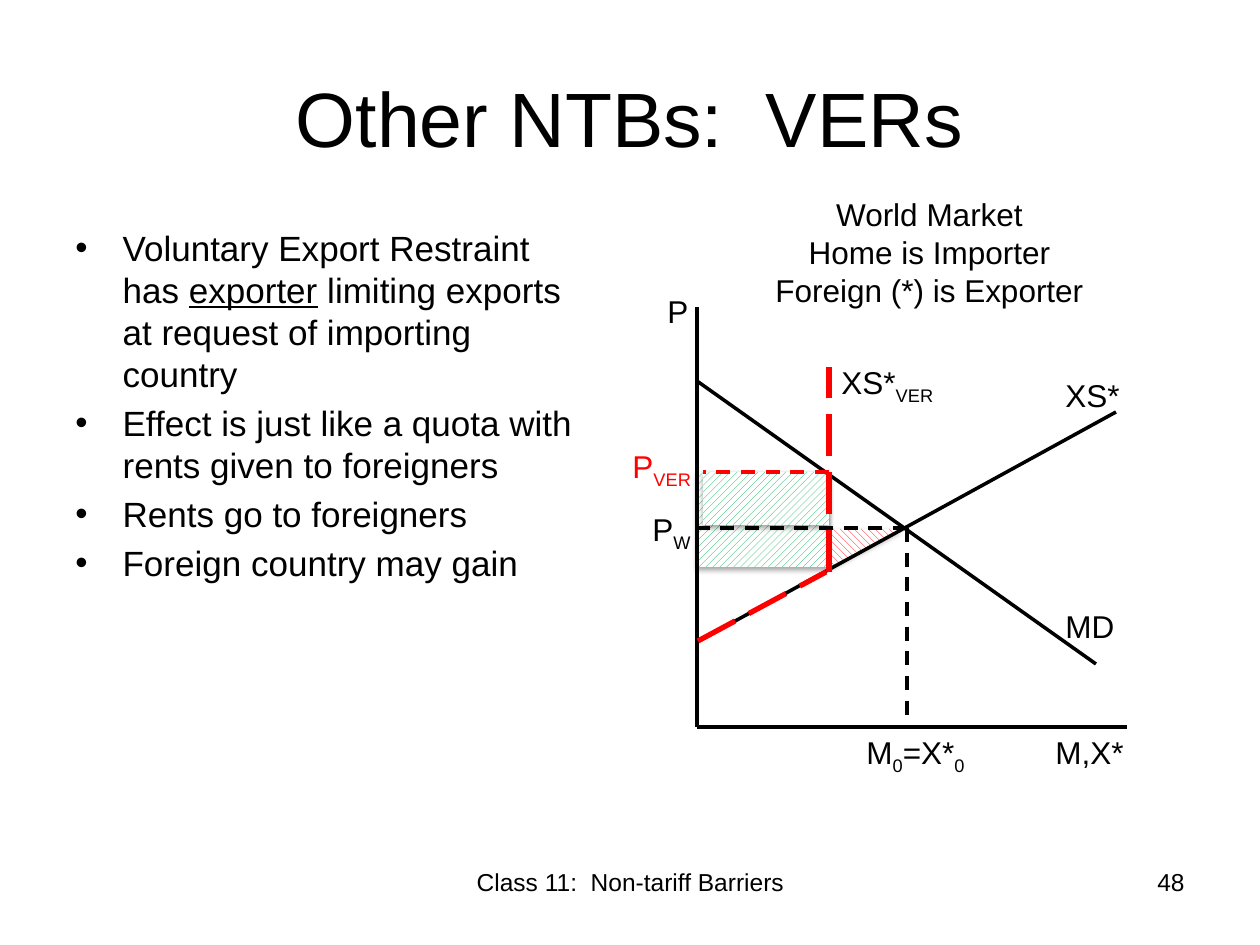
"""Build a slide on voluntary export restraints with a world market diagram."""
from lxml import etree
from pptx import Presentation
from pptx.dml.color import RGBColor
from pptx.enum.dml import MSO_LINE_DASH_STYLE as Dash, MSO_PATTERN_TYPE as Pattern
from pptx.enum.shapes import MSO_CONNECTOR as Conn, MSO_SHAPE as Shape
from pptx.enum.text import MSO_ANCHOR as Anchor, PP_ALIGN as Align
from pptx.oxml import parse_xml
from pptx.oxml.ns import nsdecls, qn
from pptx.util import Pt

SCALE = 914400 / 126
FONT = "Arial"
COLORS = {"black": "000000", "red": "FF0000", "green": "00B050", "white": "FFFFFF"}

TITLE = "Other NTBs:  VERs"
BULLETS = [
    "Voluntary Export Restraint has |exporter| limiting exports at request of importing country",
    "Effect is just like a quota with rents given to foreigners",
    "Rents go to foreigners",
    "Foreign country may gain",
]
HEADING = ["World Market", "Home is Importer", "Foreign (*) is Exporter"]
FOOTER = "Class 11:  Non-tariff Barriers"
NUMBER = "48"

X0, X_VER, X_EQ = 697, 829, 907
Y_VER, Y_W, Y_BASE = 472, 528, 727

AREAS = [
    (Shape.RECTANGLE, X0, Y_VER, 132, 95, "green", Pattern.WIDE_UPWARD_DIAGONAL),
    (Shape.RIGHT_TRIANGLE, X_VER, 529, 73, 38, "red", Pattern.WIDE_DOWNWARD_DIAGONAL),
    (Shape.RECTANGLE, 703, Y_VER, 126, 53, "green", Pattern.WIDE_UPWARD_DIAGONAL),
]
LINES = [
    (X0, Y_BASE, 1127, Y_BASE, "black", 2, None),
    (X0, Y_BASE, X0, 307, "black", 2, None),
    (X_EQ, Y_W, X_EQ, Y_BASE, "black", 2, Dash.DASH),
    (X0, 642, 1116, 412, "black", 2, None),
    (1096, 664, X0, 381, "black", 2, None),
    (X_EQ, Y_W, X0, Y_W, "black", 2, Dash.DASH),
    (X0 + 1, 641, 826, 572, "red", 3, Dash.LONG_DASH),
    (X_VER, 572, X_VER, 367, "red", 3, Dash.LONG_DASH),
    (X_VER, Y_VER, 703, Y_VER, "red", 2, Dash.DASH),
]
LABELS = [
    ("P", 655, 286, 94, "black"),
    ("MD", 1053, 601, 94, "black"),
    ("XS*", 1053, 370, 94, "black"),
    ("M,X*", 1043, 727, 94, "black"),
    ("M|0|=X*|0|", 854, 727, 136, "black"),
    ("XS*|VER|", 829, 357, 147, "black"),
    ("P|W|", 640, 504, 94, "black"),
    ("P|VER|", 620, 441, 94, "red"),
]


def px(n):
    return round(n * SCALE)


def rgb(name):
    return RGBColor.from_string(COLORS[name])


def add_text(s, paragraphs, x, y, w, h, size, color="black", align=Align.LEFT,
             anchor=Anchor.TOP, bullets=False):
    tf = s.shapes.add_textbox(px(x), px(y), px(w), px(h)).text_frame
    tf.word_wrap = True
    tf.vertical_anchor = anchor
    for i, text in enumerate(paragraphs):
        p = tf.add_paragraph() if i else tf.paragraphs[0]
        p.alignment = align
        for j, part in enumerate(text.split("|")):
            if not part:
                continue
            r = p.add_run()
            r.text = part
            r.font.name, r.font.size = FONT, Pt(size)
            r.font.color.rgb = rgb(color)
            if j % 2 and bullets:
                r.font.underline = True
            elif j % 2:
                r.font._element.set("baseline", "-25000")
        if bullets:
            p.space_before = Pt(size * 0.2)
            pPr = p._p.get_or_add_pPr()
            pPr.set("marL", "342900")
            pPr.set("indent", "-342900")
            etree.SubElement(pPr, qn("a:buFont")).set("typeface", FONT)
            etree.SubElement(pPr, qn("a:buChar")).set("char", "•")


def add_area(s, kind, x, y, w, h, color, pattern):
    sp = s.shapes.add_shape(kind, px(x), px(y), px(w), px(h))
    sp.line.fill.background()
    sp.fill.patterned()
    sp.fill.pattern = pattern
    sp.fill.fore_color.rgb = rgb(color)
    sp.fill.back_color.rgb = rgb("white")
    if kind == Shape.RIGHT_TRIANGLE:
        sp._element.spPr.find(qn("a:xfrm")).set("flipV", "1")
    sp._element.spPr.append(parse_xml(
        f'<a:effectLst {nsdecls("a")}><a:outerShdw blurRad="40000" dist="23000" '
        f'dir="5400000" rotWithShape="0"><a:srgbClr val="{COLORS["black"]}">'
        '<a:alpha val="35000"/></a:srgbClr></a:outerShdw></a:effectLst>'))


def add_line(s, x1, y1, x2, y2, color, width, dash):
    c = s.shapes.add_connector(Conn.STRAIGHT, px(x1), px(y1), px(x2), px(y2))
    c.line.color.rgb = rgb(color)
    c.line.width = Pt(width)
    if dash:
        c.line.dash_style = dash
    etree.SubElement(c._element.spPr, qn("a:effectLst"))


def main():
    prs = Presentation()
    prs.slide_width, prs.slide_height = px(1260), px(945)
    s = prs.slides.add_slide(prs.slide_layouts[6])
    for area in AREAS:
        add_area(s, *area)
    add_text(s, [TITLE], 63, 38, 1134, 158, 44, align=Align.CENTER, anchor=Anchor.MIDDLE)
    add_text(s, BULLETS, 63, 220, 541, 624, 20, bullets=True)
    add_text(s, [FOOTER], 431, 861, 399, 66, 14, align=Align.CENTER)
    add_text(s, [NUMBER], 903, 861, 294, 66, 14, align=Align.RIGHT)
    for line in LINES:
        add_line(s, *line)
    add_text(s, HEADING, 725, 189, 409, 127, 18, align=Align.CENTER)
    for text, x, y, w, color in LABELS:
        add_text(s, [text], x, y, w, 50, 18, color)
    prs.save("out.pptx")


if __name__ == "__main__":
    main()
